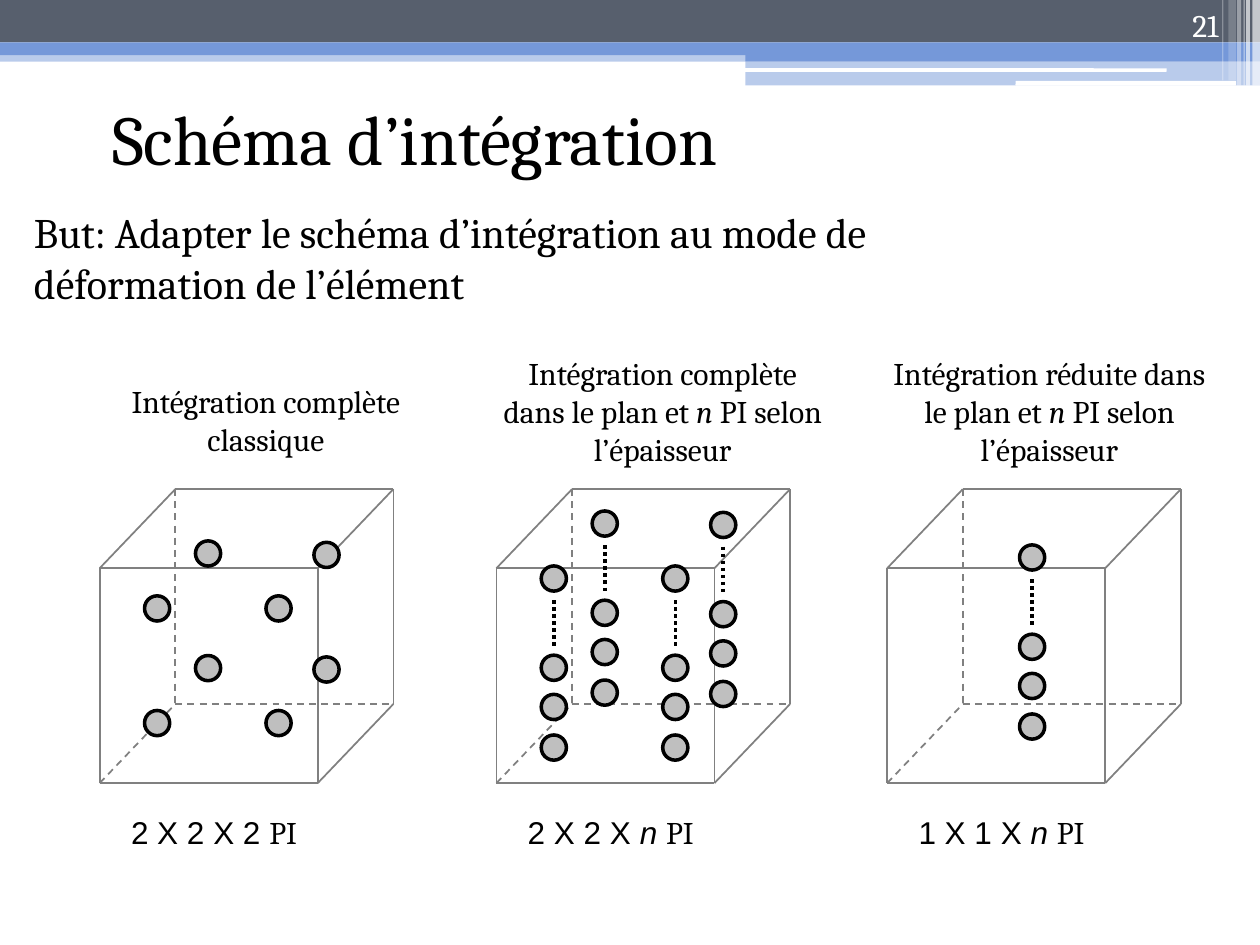
from pptx import Presentation
from pptx.dml.color import RGBColor
from pptx.enum.dml import MSO_LINE
from pptx.enum.shapes import MSO_CONNECTOR, MSO_SHAPE
from pptx.enum.text import MSO_ANCHOR, MSO_AUTO_SIZE, PP_ALIGN
from pptx.oxml.ns import qn
from pptx.util import Pt
from lxml import etree

RECTANGLE, ROUNDED, OVAL = MSO_SHAPE.RECTANGLE, MSO_SHAPE.ROUNDED_RECTANGLE, MSO_SHAPE.OVAL
STRAIGHT = MSO_CONNECTOR.STRAIGHT
DASH, DOTS = MSO_LINE.DASH, MSO_LINE.ROUND_DOT
LEFT, CENTER, RIGHT = PP_ALIGN.LEFT, PP_ALIGN.CENTER, PP_ALIGN.RIGHT
TOP, MIDDLE, BOTTOM = MSO_ANCHOR.TOP, MSO_ANCHOR.MIDDLE, MSO_ANCHOR.BOTTOM

SERIF, SANS = "Cambria", "Arial"
BLACK, WHITE, GREY, SILVER = "000000", "FFFFFF", "808080", "BFBFBF"
SLATE, BLUE = "575F6D", "7598D9"

TITLE = "Schéma d’intégration"
GOAL = "But: Adapter le schéma d’intégration au mode de déformation de l’élément"
PAGE_NUMBER = "21"

HEADER_BARS = [
    (RECTANGLE, 0, 28.8, 720, 6.5, BLUE, 50),
    (RECTANGLE, 0, 0, 720, 24.3, SLATE, 100),
    (RECTANGLE, 0, 24.3, 720, 7.2, BLUE, 100),
    (RECTANGLE, 426, 28, 294, 7, BLUE, 100),
    (RECTANGLE, 426, 34.8, 294, 14, BLUE, 50),
    (ROUNDED, 425.5, 39, 241.2, 2, WHITE, 100),
    (ROUNDED, 580.3, 46.2, 126, 2.7, WHITE, 100),
    (RECTANGLE, 715.7, 0, 4.3, 49, WHITE, 65),
    (RECTANGLE, 712.1, 0, 2.2, 49, WHITE, 65),
    (RECTANGLE, 710.6, 0, 0.7, 49, WHITE, 60),
    (RECTANGLE, 707, 0, 2.2, 49, WHITE, 40),
    (RECTANGLE, 702, 0, 4.3, 46, WHITE, 20),
    (RECTANGLE, 698.4, 0, 0.7, 46, WHITE, 30),
]

FOUR_COLUMNS = [(25.6, 0), (54.7, -31.4), (122.4, -30.6), (95, 0)]
ONE_COLUMN = [(75.6, 0)]
TWO_LEVELS = [0, -65.5]
N_LEVELS = [0, -23.2, -45.6, -96.6]
N_GAP = (-77, -49.7)

SCHEMES = [
    {
        "left": 57, "caption_left": 50.4, "caption_top": 214.6,
        "caption": [("Intégration complète classique", SERIF, False)],
        "count": [("2 X 2 X 2 ", SANS, False), ("PI", SERIF, False)],
        "columns": FOUR_COLUMNS, "levels": TWO_LEVELS, "base": 406, "gap": None,
    },
    {
        "left": 283.7, "caption_left": 277.2, "caption_top": 198.7,
        "caption": [("Intégration complète dans le plan et ", SERIF, False),
                    ("n", SERIF, True), (" PI selon l’épaisseur", SERIF, False)],
        "count": [("2 X 2 X ", SANS, False), ("n ", SANS, True), ("PI", SERIF, False)],
        "columns": FOUR_COLUMNS, "levels": N_LEVELS, "base": 420, "gap": N_GAP,
    },
    {
        "left": 507, "caption_left": 498.2, "caption_top": 198.7,
        "caption": [("Intégration réduite dans le plan et ", SERIF, False),
                    ("n", SERIF, True), (" PI selon l’épaisseur", SERIF, False)],
        "count": [("1 X 1 X ", SANS, False), ("n ", SANS, True), ("PI", SERIF, False)],
        "columns": ONE_COLUMN, "levels": N_LEVELS, "base": 408, "gap": N_GAP,
    },
]

CUBE_TOP, CUBE_WIDTH, CUBE_HEIGHT = 324.7, 124.6, 122.8
DEPTH_X, DEPTH_Y = 43.2, -45.2
POINT_SIZE = 14.4
CAPTION_BOTTOM = 274.3
HIDDEN_CORNER = (0, 1, 1)


def color(value):
    return RGBColor.from_string(value)


def place(shape, left, top, width, height):
    shape.left, shape.top = Pt(left), Pt(top)
    shape.width, shape.height = Pt(width), Pt(height)


def add_filled(shapes, kind, left, top, width, height, fill, opacity=100):
    shape = shapes.add_shape(kind, Pt(left), Pt(top), Pt(width), Pt(height))
    shape.shadow.inherit = False
    shape.fill.solid()
    shape.fill.fore_color.rgb = color(fill)
    shape.line.fill.background()
    if opacity < 100:
        tint = shape._element.spPr.find(".//" + qn("a:srgbClr"))
        etree.SubElement(tint, qn("a:alpha"), val=str(opacity * 1000))
    return shape


def add_line(shapes, start, end, stroke, width, dash=None):
    line = shapes.add_connector(STRAIGHT, *[Pt(value) for value in (*start, *end)])
    line.line.color.rgb = color(stroke)
    line.line.width = Pt(width)
    if dash is not None:
        line.line.dash_style = dash
    etree.SubElement(line._element.spPr, qn("a:effectLst"))


def write(box, spans, size, align=LEFT, anchor=TOP, ink=BLACK):
    frame = box.text_frame
    frame.word_wrap = True
    frame.auto_size = MSO_AUTO_SIZE.NONE
    frame.vertical_anchor = anchor
    para = frame.paragraphs[0]
    para.alignment = align
    para.space_before = Pt(0)
    for text, font, italic in spans:
        span = para.add_run()
        span.text = text
        span.font.name = font
        span.font.size = Pt(size)
        span.font.italic = italic
        span.font.color.rgb = color(ink)
    return para


def add_text(shapes, left, top, width, height, spans, size, **style):
    box = shapes.add_textbox(Pt(left), Pt(top), Pt(width), Pt(height))
    write(box, spans, size, **style)


def add_cube(shapes, left):
    cube = shapes.add_group_shape()
    corners = [(x, y, z) for x in (0, 1) for y in (0, 1) for z in (0, 1)]

    def project(corner):
        x, y, z = corner
        return (left + x * CUBE_WIDTH + z * DEPTH_X,
                CUBE_TOP + y * CUBE_HEIGHT + z * DEPTH_Y)

    for start in corners:
        for axis in range(3):
            if start[axis] == 0:
                end = start[:axis] + (1,) + start[axis + 1:]
                dash = DASH if HIDDEN_CORNER in (start, end) else None
                add_line(cube.shapes, project(start), project(end), GREY, 1, dash)


def add_scheme(shapes, scheme):
    left, top = scheme["left"], scheme["caption_top"]
    add_cube(shapes, left)
    add_text(shapes, scheme["caption_left"], top, 203, CAPTION_BOTTOM - top,
             scheme["caption"], 18, align=CENTER)
    add_text(shapes, left + 10.8, 460.8, 136.8, 33, scheme["count"], 18)
    for offset, shift in scheme["columns"]:
        x, y = left + offset, scheme["base"] + shift
        for level in scheme["levels"]:
            point = add_filled(shapes, OVAL, x, y + level, POINT_SIZE, POINT_SIZE, SILVER)
            point.line.color.rgb = color(BLACK)
            point.line.width = Pt(2)
        if scheme["gap"]:
            middle = x + POINT_SIZE / 2
            start, end = scheme["gap"]
            add_line(shapes, (middle, y + start), (middle, y + end), BLACK, 2, DOTS)


def main():
    deck = Presentation()
    deck.slide_width, deck.slide_height = Pt(720), Pt(540)
    page = deck.slides.add_slide(deck.slide_layouts[1])
    shapes = page.shapes

    for bar in HEADER_BARS:
        add_filled(shapes, *bar)
    add_text(shapes, 643.7, 0, 59.8, 28.8, [(PAGE_NUMBER, SERIF, False)], 18,
             align=RIGHT, anchor=BOTTOM, ink=WHITE)

    title, goal = page.placeholders
    place(title, 56.9, 46.8, 576, 64)
    write(title, [(TITLE, SERIF, False)], 40, anchor=MIDDLE)
    place(goal, 12.2, 114.5, 564.5, 61.2)
    para = write(goal, [(GOAL, SERIF, False)], 24)
    properties = para._p.get_or_add_pPr()
    properties.set("marL", "0")
    properties.set("indent", "0")
    etree.SubElement(properties, qn("a:buNone"))

    for scheme in SCHEMES:
        add_scheme(shapes, scheme)
    deck.save("out.pptx")


if __name__ == "__main__":
    main()
